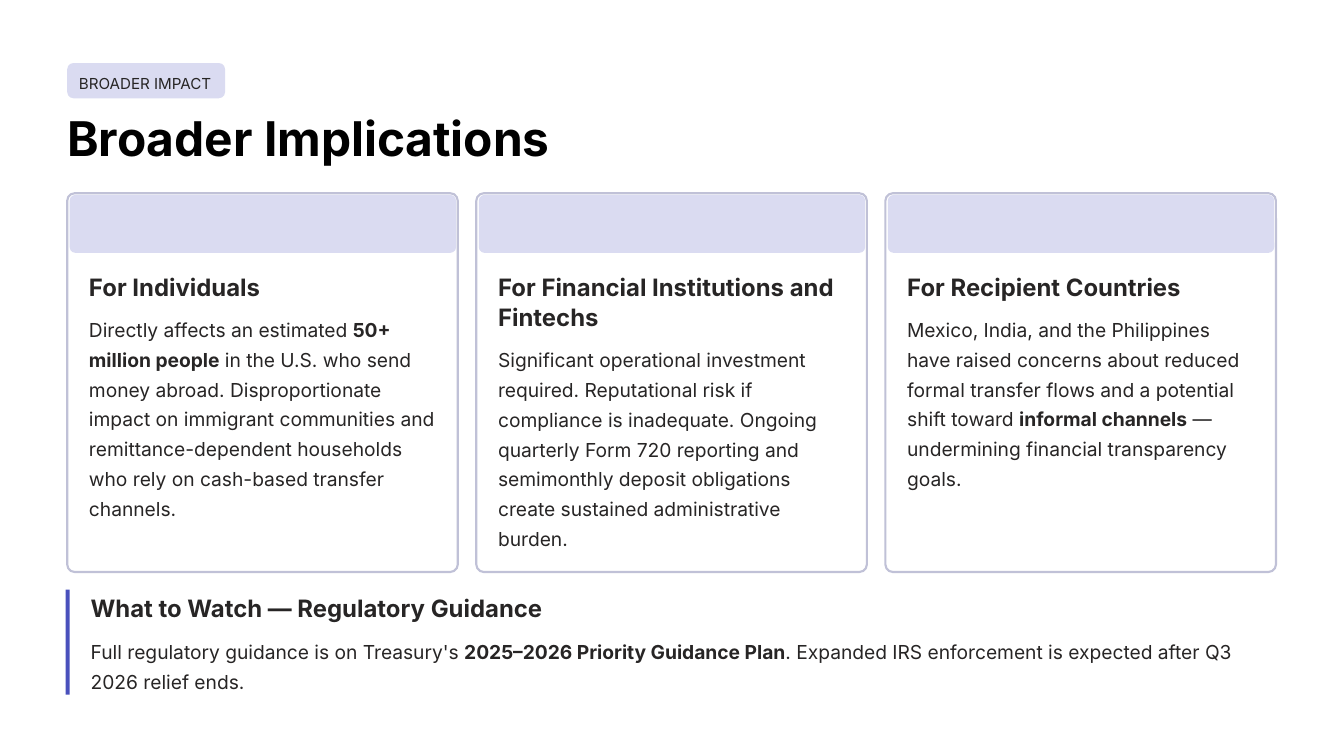
from pptx import Presentation
from pptx.dml.color import RGBColor as Rgb
from pptx.enum.shapes import MSO_SHAPE as Shape
from pptx.enum.text import MSO_ANCHOR as Anchor, MSO_AUTO_SIZE as AutoSize, PP_ALIGN as Align
from pptx.util import Pt

PX = 9144
THEME = {
    "font": "Inter",
    "ink": "272525",
    "black": "000000",
    "white": "FFFFFF",
    "lavender": "DADBF1",
    "border": "C0C1D7",
    "accent": "4950BC",
    "tag": {"size": 13, "leading": 20},
    "title": {"size": 41, "leading": 51.5},
    "heading": {"size": 20.5, "leading": 25.5},
    "body": {"size": 16.5, "leading": 25.5},
}

deck = Presentation()
deck.slide_width, deck.slide_height = 1600 * PX, 900 * PX
slide = deck.slides.add_slide(deck.slide_layouts[5])


def add_panel(kind, box, fill, radius=None, border=None):
    panel = slide.shapes.add_shape(kind, *[side * PX for side in box])
    panel.shadow.inherit = False
    panel.fill.solid()
    panel.fill.fore_color.rgb = Rgb.from_string(THEME[fill])
    if radius:
        panel.adjustments[0] = radius
    if border:
        panel.line.color.rgb = Rgb.from_string(THEME[border])
        panel.line.width = Pt(1.8)
    else:
        panel.line.fill.background()


def write(holder, box, text, style, wrap=False, color="ink", bold=False):
    for side, length in zip(("left", "top", "width", "height"), box):
        setattr(holder, side, length * PX)
    frame = holder.text_frame
    frame_format = {
        "margin_left": 0, "margin_top": 0, "margin_right": 0, "margin_bottom": 0,
        "auto_size": AutoSize.NONE, "word_wrap": wrap, "vertical_anchor": Anchor.TOP,
    }
    for name, value in frame_format.items():
        setattr(frame, name, value)
    paragraph = frame.paragraphs[0]
    paragraph.alignment = Align.LEFT
    paragraph.line_spacing = Pt(THEME[style]["leading"])
    for index, part in enumerate(text.split("**")):
        run = paragraph.add_run()
        run.text = part
        run_format = {
            "name": THEME["font"], "size": Pt(THEME[style]["size"]),
            "bold": bold or index % 2 == 1,
        }
        for name, value in run_format.items():
            setattr(run.font, name, value)
        run.font.color.rgb = Rgb.from_string(THEME[color])


new_text = slide.shapes.add_textbox

add_panel(Shape.ROUNDED_RECTANGLE, (80, 75, 188, 42), "lavender", 0.18)
write(new_text(0, 0, 0, 0), (94, 82, 161, 28), "BROADER IMPACT", "tag")
write(slide.shapes.title, (80, 126, 580, 72), "Broader Implications", "title",
      color="black", bold=True)

cards = [
    ("For Individuals", 287, 1,
     "Directly affects an estimated **50+ million people** in the U.S. who send money "
     "abroad. Disproportionate impact on immigrant communities and remittance-dependent "
     "households who rely on cash-based transfer channels."),
    ("For Financial Institutions and Fintechs", 414, 2,
     "Significant operational investment required. Reputational risk if compliance is "
     "inadequate. Ongoing quarterly Form 720 reporting and semimonthly deposit "
     "obligations create sustained administrative burden."),
    ("For Recipient Countries", 329, 1,
     "Mexico, India, and the Philippines have raised concerns about reduced formal "
     "transfer flows and a potential shift toward **informal channels** — undermining "
     "financial transparency goals."),
]
CARD_PITCH, HEADING_LINE = 487, 36
for column, (heading, heading_width, heading_lines, body) in enumerate(cards):
    left = 80 + column * CARD_PITCH
    heading_height = heading_lines * HEADING_LINE
    add_panel(Shape.ROUNDED_RECTANGLE, (left, 230, 465, 451), "white", 0.02, "border")
    add_panel(Shape.ROUNDED_RECTANGLE, (left + 3, 232, 460, 69), "lavender", 0.1)
    write(new_text(0, 0, 0, 0), (left + 26, 323, heading_width, heading_height),
          heading, "heading", wrap=heading_lines > 1, bold=True)
    write(new_text(0, 0, 0, 0), (left + 26, 335 + heading_height, 414, 248),
          body, "body", wrap=True)

add_panel(Shape.RECTANGLE, (78, 702, 5, 125), "accent")
write(new_text(0, 0, 0, 0), (108, 705, 543, 36),
      "What to Watch — Regulatory Guidance", "heading", bold=True)
write(new_text(0, 0, 0, 0), (108, 754, 1411, 71),
      "Full regulatory guidance is on Treasury's **2025–2026 Priority Guidance Plan**. "
      "Expanded IRS enforcement is expected after Q3 2026 relief ends.", "body", wrap=True)

deck.save("out.pptx")
